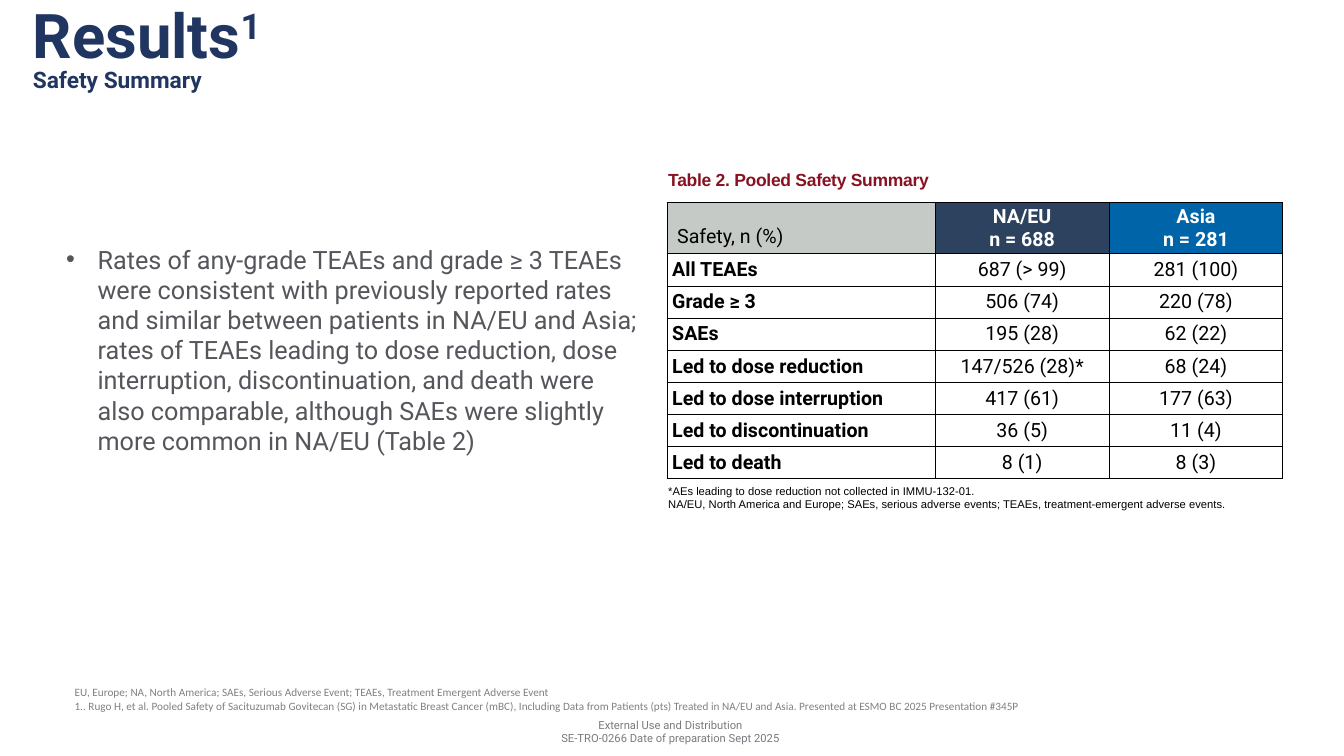
from dataclasses import dataclass
from itertools import product

from lxml.etree import SubElement
from pptx import Presentation
from pptx.dml.color import RGBColor
from pptx.enum.text import MSO_ANCHOR, PP_ALIGN
from pptx.oxml.ns import qn
from pptx.slide import Slide
from pptx.table import _Cell
from pptx.util import Cm, Pt

NAVY = RGBColor(0x20, 0x36, 0x61)
SLATE = RGBColor(0x2D, 0x42, 0x5F)
BLUE = RGBColor(0x00, 0x64, 0xA8)
RED = RGBColor(0x88, 0x12, 0x22)
SILVER = RGBColor(0xC6, 0xCA, 0xC6)
INK = RGBColor(0x54, 0x56, 0x5B)
STEEL = RGBColor(0x78, 0x7A, 0x7E)
GREY = RGBColor(0x80, 0x80, 0x80)
BLACK = RGBColor(0x00, 0x00, 0x00)
WHITE = RGBColor(0xFF, 0xFF, 0xFF)


@dataclass(frozen=True)
class Line:
    text: str
    size: float
    raised: str = ""
    spread: float = 1.0


@dataclass(frozen=True)
class Box:
    left: float
    top: float
    width: float
    height: float
    font: str
    color: RGBColor
    lines: tuple[Line, ...]
    bold: bool = False
    align: PP_ALIGN = PP_ALIGN.LEFT
    anchor: MSO_ANCHOR = MSO_ANCHOR.TOP
    foot: float = 0.13
    track: int = 0
    bullet: bool = False


BOXES = (
    Box(11.86, 18.03, 10.08, 0.81, "Roboto", STEEL, (
        Line("External Use and Distribution", 8),
        Line("SE-TRO-0266 Date of preparation Sept 2025", 8),
    ), align=PP_ALIGN.CENTER, anchor=MSO_ANCHOR.MIDDLE),
    Box(0.58, 1.07, 30.48, 2.74, "Roboto", NAVY, (
        Line("Results", 44, raised="1", spread=0.8),
        Line("", 28, raised="Safety Summary", spread=0.8),
    ), bold=True, anchor=MSO_ANCHOR.BOTTOM, foot=1.1),
    Box(1.63, 17.15, 27.23, 0.94, "Calibri", GREY, (
        Line("EU, Europe; NA, North America; SAEs, Serious Adverse Event; "
             "TEAEs, Treatment Emergent Adverse Event", 8),
        Line("1.. Rugo H, et al. Pooled Safety of Sacituzumab Govitecan (SG) in "
             "Metastatic Breast Cancer (mBC), Including Data from Patients (pts) "
             "Treated in NA/EU and Asia. Presented at ESMO BC 2025 "
             "Presentation #345P", 8),
    )),
    Box(1.42, 6.02, 15.01, 5.64, "Roboto", INK, (
        Line("Rates of any-grade TEAEs and grade ≥ 3 TEAEs were consistent with "
             "previously reported rates and similar between patients in NA/EU and "
             "Asia; rates of TEAEs leading to dose reduction, dose interruption, "
             "discontinuation, and death were also comparable, although SAEs were "
             "slightly more common in NA/EU (Table 2)", 18),
    ), bullet=True),
    Box(16.59, 4.14, 8.84, 0.79, "Arial", RED, (
        Line("Table 2. Pooled Safety Summary", 12.5),
    ), bold=True, track=-20),
    Box(16.59, 12.07, 15.52, 0.94, "Arial", BLACK, (
        Line("*AEs leading to dose reduction not collected in IMMU-132-01.", 8),
        Line("NA/EU, North America and Europe; SAEs, serious adverse events; "
             "TEAEs, treatment-emergent adverse events.", 8),
    )),
)

ROWS = (
    ("Safety, n (%)", "NA/EU\nn = 688", "Asia\nn = 281"),
    ("All TEAEs", "687 (> 99)", "281 (100)"),
    ("Grade ≥ 3", "506 (74)", "220 (78)"),
    ("SAEs", "195 (28)", "62 (22)"),
    ("Led to dose reduction", "147/526 (28)*", "68 (24)"),
    ("Led to dose interruption", "417 (61)", "177 (63)"),
    ("Led to discontinuation", "36 (5)", "11 (4)"),
    ("Led to death", "8 (1)", "8 (3)"),
)
WIDTHS = (6.76, 4.38, 4.38)
HEIGHTS = (1.25,) + (0.81,) * 7
HEAD_FILLS = (SILVER, SLATE, BLUE)


def add_box(slide: Slide, box: Box) -> None:
    shape = slide.shapes.add_textbox(
        Cm(box.left), Cm(box.top), Cm(box.width), Cm(box.height))
    frame = shape.text_frame
    frame.word_wrap = True
    frame.vertical_anchor = box.anchor
    frame.margin_bottom = Cm(box.foot)
    for index, line in enumerate(box.lines):
        para = frame.add_paragraph() if index else frame.paragraphs[0]
        para.alignment = box.align
        para.line_spacing = line.spread
        if box.bullet:
            props = para._p.get_or_add_pPr()
            props.set("marL", str(Cm(0.79)))
            props.set("indent", str(Cm(-0.79)))
            SubElement(props, qn("a:buFont"), typeface="Arial")
            SubElement(props, qn("a:buChar"), char="•")
        para.font.name = box.font
        para.font.size = Pt(line.size)
        para.font.bold = box.bold
        para.font.color.rgb = box.color
        for text, rise in ((line.text, 0), (line.raised, 30000)):
            if text:
                run = para.add_run()
                run.text = text
                if rise:
                    run.font._element.set("baseline", str(rise))
                if box.track:
                    run.font._element.set("spc", str(box.track))


def add_edges(cell: _Cell) -> None:
    props = cell._tc.get_or_add_tcPr()
    for side in ("lnL", "lnR", "lnT", "lnB"):
        edge = SubElement(props, qn(f"a:{side}"), w=str(Pt(0.75)))
        fill = SubElement(edge, qn("a:solidFill"))
        SubElement(fill, qn("a:srgbClr"), val=str(BLACK))


def fill_cell(cell: _Cell, row: int, col: int) -> None:
    corner = row == col == 0
    add_edges(cell)
    cell.fill.solid()
    cell.fill.fore_color.rgb = WHITE if row else HEAD_FILLS[col]
    cell.vertical_anchor = MSO_ANCHOR.BOTTOM if corner else MSO_ANCHOR.MIDDLE
    if not corner:
        cell.margin_left = cell.margin_right = Cm(0.13)
        cell.margin_top = cell.margin_bottom = Cm(0.05)
    cell.text = ROWS[row][col]
    for para in cell.text_frame.paragraphs:
        para.alignment = PP_ALIGN.CENTER if col else PP_ALIGN.LEFT
        para.font.name = "Roboto"
        para.font.size = Pt(14)
        para.font.bold = (row == 0) != (col == 0)
        para.font.color.rgb = BLACK if row or corner else WHITE


def add_grid(slide: Slide) -> None:
    table = slide.shapes.add_table(
        len(ROWS), len(WIDTHS), Cm(16.81), Cm(5.11),
        Cm(sum(WIDTHS)), Cm(sum(HEIGHTS))).table
    table.first_row = table.horz_banding = False
    for column, width in zip(table.columns, WIDTHS):
        column.width = Cm(width)
    for band, height in zip(table.rows, HEIGHTS):
        band.height = Cm(height)
    for row, col in product(range(len(ROWS)), range(len(WIDTHS))):
        fill_cell(table.cell(row, col), row, col)


def main() -> None:
    deck = Presentation()
    deck.slide_width, deck.slide_height = Cm(33.87), Cm(19.05)
    slide = deck.slides.add_slide(deck.slide_layouts[6])
    for box in BOXES:
        add_box(slide, box)
    add_grid(slide)
    deck.save("out.pptx")


if __name__ == "__main__":
    main()
